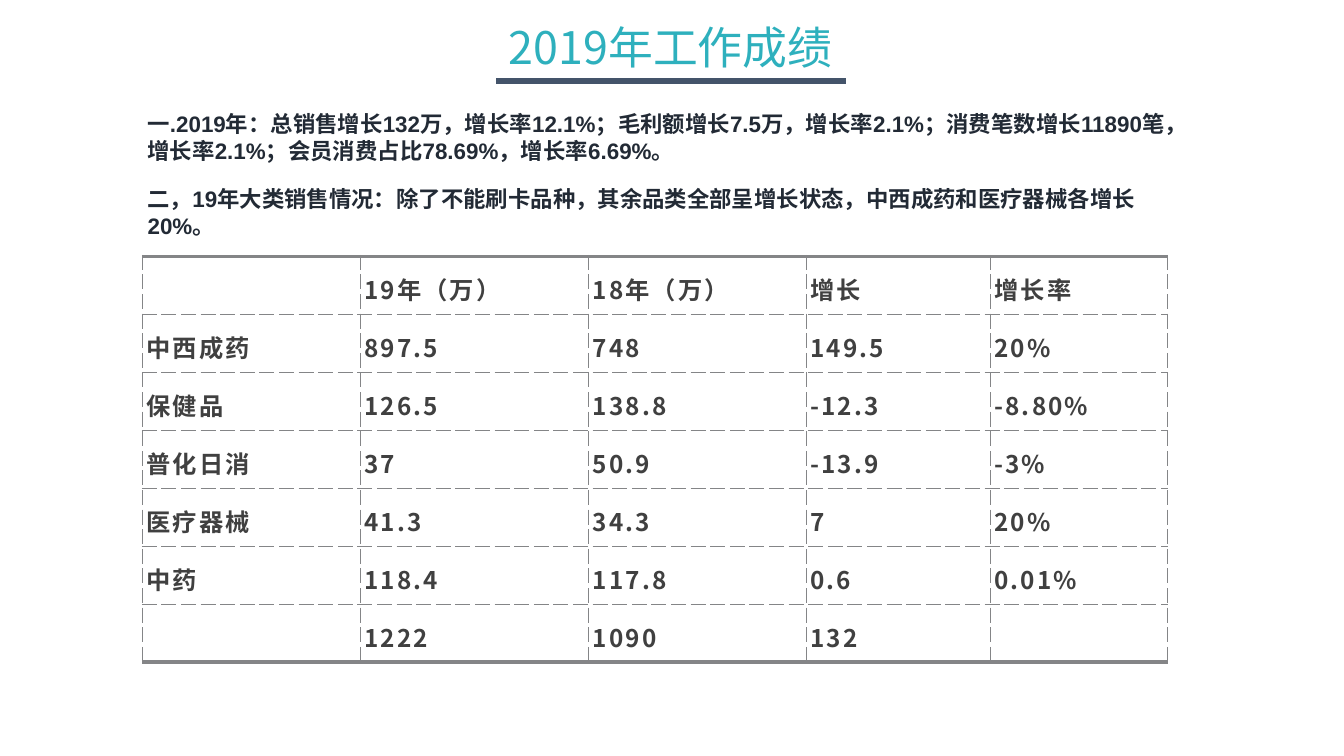
from dataclasses import dataclass

from lxml.etree import SubElement
from pptx import Presentation
from pptx.dml.color import RGBColor
from pptx.enum.shapes import MSO_CONNECTOR
from pptx.enum.text import MSO_ANCHOR, MSO_AUTO_SIZE, PP_ALIGN
from pptx.oxml.ns import qn
from pptx.util import Inches, Pt


@dataclass(frozen=True)
class Theme:
    title: str = "2EB0BD"
    rule: str = "44546A"
    body: str = "222A35"
    cell: str = "404040"
    grid: str = "848587"
    paper: str = "FFFFFF"
    sans: str = "Noto Sans CJK SC"
    latin: str = "Arial"
    title_size: float = 24
    body_size: float = 12
    cell_size: float = 13
    thin: float = 0.75
    thick: float = 2.25


THEME = Theme()
WIDTH = 10
HEIGHT = WIDTH * 9 / 16
TITLE = "2019年工作成绩"
NOTES = [
    ((1, 0.77, 7.96, 0.5),
     "一.2019年：总销售增长132万，增长率12.1%；毛利额增长7.5万，增长率2.1%；"
     "消费笔数增长11890笔，增长率2.1%；会员消费占比78.69%，增长率6.69%。"),
    ((1, 1.33, 7.69, 0.5),
     "二，19年大类销售情况：除了不能刷卡品种，其余品类全部呈增长状态，"
     "中西成药和医疗器械各增长20%。"),
]
COLUMNS = [1.62, 1.7, 1.62, 1.37, 1.32]
SALES = [
    ["", "19年（万）", "18年（万）", "增长", "增长率"],
    ["中西成药", "897.5", "748", "149.5", "20%"],
    ["保健品", "126.5", "138.8", "-12.3", "-8.80%"],
    ["普化日消", "37", "50.9", "-13.9", "-3%"],
    ["医疗器械", "41.3", "34.3", "7", "20%"],
    ["中药", "118.4", "117.8", "0.6", "0.01%"],
    ["", "1222", "1090", "132", ""],
]


def style(para, size, color, face, bold=False):
    font = para.font
    font.size, font.name, font.bold = Pt(size), face, bold
    font.color.rgb = RGBColor.from_string(color)
    props = para._p.pPr.find(qn("a:defRPr"))
    SubElement(props, qn("a:ea")).set("typeface", THEME.sans)
    return props


def add_title(slide, box):
    left, top, width, height = box
    title = slide.shapes.title
    title.left, title.top = Inches(left), Inches(top)
    title.width, title.height = Inches(width), Inches(height)
    frame = title.text_frame
    frame.text = TITLE
    frame.auto_size = MSO_AUTO_SIZE.NONE
    frame.vertical_anchor = MSO_ANCHOR.MIDDLE
    frame.margin_left = frame.margin_right = 0
    para = frame.paragraphs[0]
    para.alignment, para.line_spacing = PP_ALIGN.CENTER, 0.9
    style(para, THEME.title_size, THEME.title, THEME.sans)

    start, base = left + width * 0.302, top + height * 0.97
    rule = slide.shapes.add_connector(
        MSO_CONNECTOR.STRAIGHT, Inches(start), Inches(base),
        Inches(start + width * 0.397), Inches(base))
    rule.line.color.rgb = RGBColor.from_string(THEME.rule)
    rule.line.width = Pt(3)
    SubElement(rule._element.spPr, qn("a:effectLst"))


def add_note(slide, box, text):
    frame = slide.shapes.add_textbox(*map(Inches, box)).text_frame
    frame.word_wrap = True
    frame.auto_size = MSO_AUTO_SIZE.SHAPE_TO_FIT_TEXT
    frame.text = text
    style(frame.paragraphs[0], THEME.body_size, THEME.body, THEME.latin, True)


def add_edge(props, side, thick):
    width = THEME.thick if thick else THEME.thin
    line = SubElement(props, qn(f"a:ln{side}"), w=str(Pt(width)))
    fill = SubElement(line, qn("a:solidFill"))
    SubElement(fill, qn("a:srgbClr"), val=THEME.grid)
    SubElement(line, qn("a:prstDash"), val="solid" if thick else "sysDash")


def fill_cell(cell, text, first, last):
    cell.margin_left = cell.margin_right = Inches(0.03)
    cell.margin_top = cell.margin_bottom = Inches(0.01)
    cell.vertical_anchor = MSO_ANCHOR.MIDDLE
    cell.text = text
    para = cell.text_frame.paragraphs[0]
    para.line_spacing = 1.2
    style(para, THEME.cell_size, THEME.cell, THEME.sans, True).set("spc", "120")
    props = cell._tc.get_or_add_tcPr()
    for side, thick in zip("LRTB", (False, False, first, last)):
        add_edge(props, side, thick)
    cell.fill.solid()
    cell.fill.fore_color.rgb = RGBColor.from_string(THEME.paper)


def add_sales(slide, box):
    count = len(SALES)
    table = slide.shapes.add_table(count, len(COLUMNS), *map(Inches, box)).table
    table.first_row = table.horz_banding = False
    for column, share in zip(table.columns, COLUMNS):
        column.width = Inches(box[2] * share / sum(COLUMNS))
    for r, values in enumerate(SALES):
        table.rows[r].height = Inches(box[3] / count)
        for c, text in enumerate(values):
            fill_cell(table.cell(r, c), text, r == 0, r == count - 1)


def main():
    deck = Presentation()
    deck.slide_width, deck.slide_height = Inches(WIDTH), Inches(HEIGHT)
    slide = deck.slides.add_slide(deck.slide_layouts[5])
    add_title(slide, (1.71, 0.12, 6.56, 0.5))
    for box, text in NOTES:
        add_note(slide, box, text)
    add_sales(slide, (1.06, 1.91, 7.63, 3.02))
    deck.save("out.pptx")


if __name__ == "__main__":
    main()
